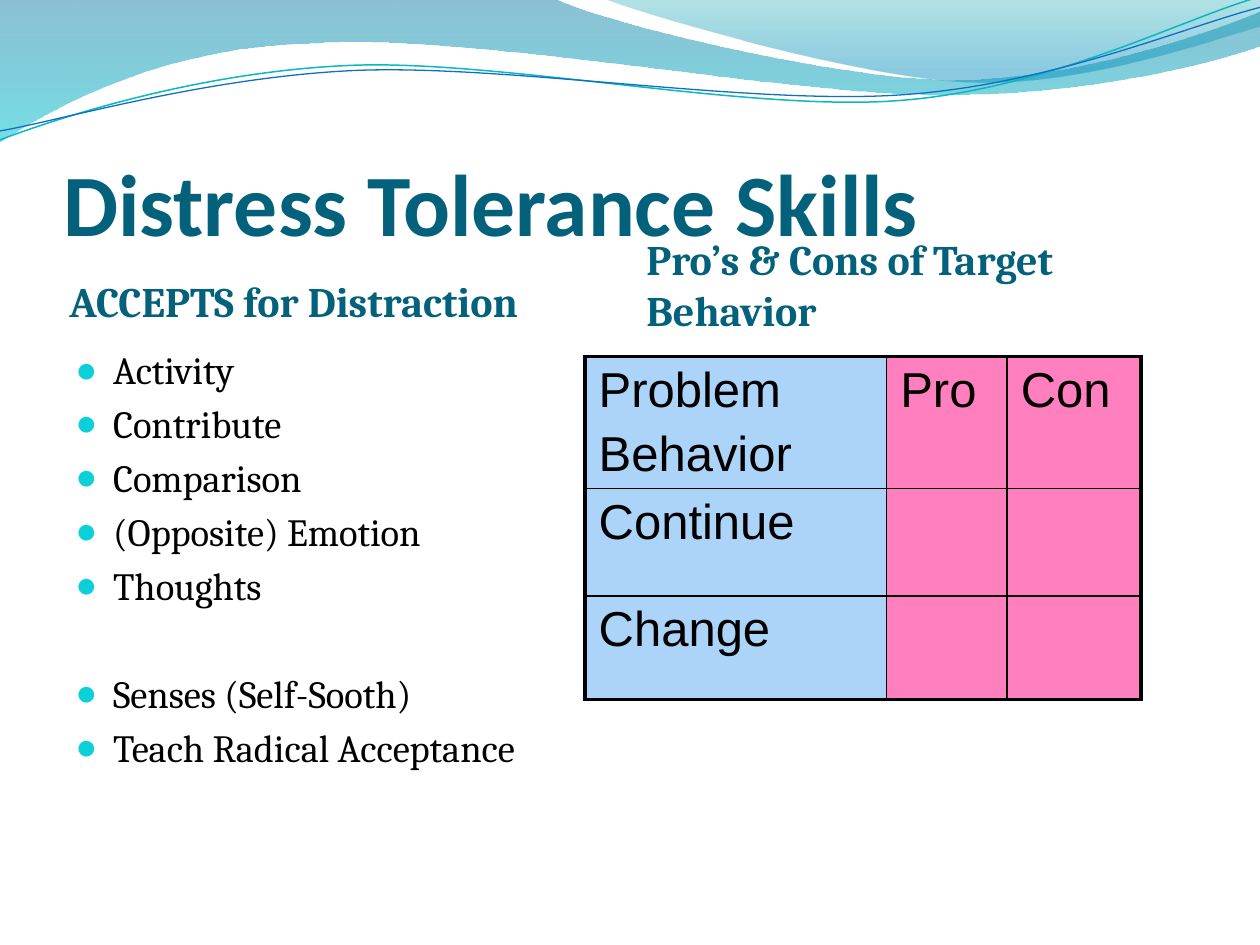
from dataclasses import dataclass

from lxml import etree
from pptx import Presentation
from pptx import util as u
from pptx.dml import color
from pptx.enum import text
from pptx.oxml import ns

TEAL, BLACK, BLUE, PINK = "04617B", "000000", "59AAF2", "FF0080"


@dataclass
class Ribbon:
    steps: list
    stops: list


@dataclass
class Strand:
    steps: list
    color: str
    width: float


@dataclass
class Style:
    font: str
    size: int
    color: str
    bold: bool = False


@dataclass
class Block:
    index: int
    box: tuple
    insets: tuple
    anchor: text.MSO_ANCHOR
    style: Style
    lines: list
    bullets: bool = False


RIBBONS = [
    Ribbon([(0, 0), (11.18, -0.03), (12.09, 0.43, 16.87, 1.6, 19.25, 1.6),
            (21.67, 1.6, 24.33, 0.66, 25.4, 0.23), (25.43, 0.91),
            (24.97, 1.12, 22.1, 1.93, 18.95, 1.91),
            (15.8, 1.91, 9.7, 0.71, 6.53, 0.86),
            (3.28, 0.91, 1.17, 2.11, -0.03, 2.87)],
           [(0, "0074A1", 45), (1, "00C6CF", 55)]),
    Ribbon([(12.17, -0.03), (12.93, 0.28, 17.32, 1.57, 19.53, 1.65),
            (21.74, 1.75, 24.41, 0.81, 25.4, 0.53), (25.4, 0)],
           [(0, "00A1A9", 30), (0.8, "008BBF", 45)]),
]
STRANDS = [
    Strand([(0, 2.82), (1.22, 2.36, 4.01, 1.45, 7.04, 1.32),
            (10.03, 1.19, 15.06, 2.26, 18.11, 2.03),
            (21.16, 1.8, 23.83, 0.38, 25.35, -0.05)], "0AB8BF", 0.85),
    Strand([(0, 2.64), (1.19, 2.44, 4.17, 1.55, 7.19, 1.42),
            (10.24, 1.3, 15.16, 2.13, 18.21, 1.91),
            (21.23, 1.7, 23.9, 0.53, 25.4, 0.15)], "0F6FC6", 0.75),
]

HEADING = Style("Cambria", 24, TEAL, True)
HEADING_INSETS = (0.13, 0, 0.13, 0)
BLOCKS = [
    Block(0, (1.27, 1.95, 22.86, 3.18), (0, 0.13, 0, 0), text.MSO_ANCHOR.BOTTOM,
          Style("Calibri", 50, TEAL, True), ["Distress Tolerance Skills"]),
    Block(1, (1.27, 5.15, 11.23, 1.83), HEADING_INSETS, text.MSO_ANCHOR.MIDDLE,
          HEADING, ["ACCEPTS for Distraction"]),
    Block(2, (1.27, 6.98, 11.23, 10.69), (0.25, 0, 0.25, 0.13), text.MSO_ANCHOR.TOP,
          Style("Cambria", 22, BLACK),
          ["Activity", "Contribute", "Comparison", "(Opposite) Emotion", "Thoughts",
           "Senses (Self-Sooth)", "Teach Radical Acceptance"], True),
    Block(3, (12.9, 4.27, 11.23, 2.92), HEADING_INSETS, text.MSO_ANCHOR.MIDDLE,
          HEADING, ["Pro’s & Cons of Target Behavior"]),
]
GROUP_START = "Senses (Self-Sooth)"
GROUP_GAP = 35.3

TABLE_STYLE = Style("Arial", 28, BLACK)
COLUMNS = [6.08, 2.43, 2.7]
ROWS = [2.65, 2.16, 2.09]
CELLS = [[["Problem", "Behavior"], ["Pro"], ["Con"]],
         [["Continue"], [], []],
         [["Change"], [], []]]


def rgb(value: str) -> color.RGBColor:
    return color.RGBColor.from_string(value)


def add_alpha(element, percent: int) -> None:
    alpha = etree.SubElement(element, ns.qn("a:alpha"))
    alpha.set("val", str(percent * 1000))


def add_outline(slide, steps: list, close: bool):
    points = [(u.Cm(step[i]), u.Cm(step[i + 1]))
              for step in steps for i in range(0, len(step), 2)]
    builder = slide.shapes.build_freeform(*points[0])
    builder.add_line_segments(points[1:], close=close)
    shape = builder.convert_to_shape()
    shape.shadow.inherit = False
    segments = iter(list(shape.element.iter(ns.qn("a:lnTo"))))
    for step in steps[1:]:
        parts = [next(segments) for _ in range(len(step) // 2)]
        if len(parts) == 3:
            curve = etree.Element(ns.qn("a:cubicBezTo"))
            parts[0].addprevious(curve)
            for part in parts:
                curve.append(part[0])
                part.getparent().remove(part)
    return shape


def draw_ribbon(slide, ribbon: Ribbon):
    shape = add_outline(slide, ribbon.steps, True)
    shape.line.fill.background()
    shape.fill.gradient()
    shape.fill.gradient_angle = 270
    for stop, (position, value, _) in zip(shape.fill.gradient_stops, ribbon.stops):
        stop.position = position
        stop.color.rgb = rgb(value)
    colors = list(shape.element.iter(ns.qn("a:srgbClr")))
    for element, (_, _, opacity) in zip(colors, ribbon.stops):
        add_alpha(element, opacity)
    return shape


def draw_strand(slide, strand: Strand):
    shape = add_outline(slide, strand.steps, False)
    shape.fill.background()
    shape.line.color.rgb = rgb(strand.color)
    shape.line.width = u.Pt(strand.width)
    return shape


def write_lines(frame, lines: list, style: Style) -> None:
    for number, line in enumerate(lines):
        paragraph = frame.paragraphs[0] if number == 0 else frame.add_paragraph()
        paragraph.alignment = text.PP_ALIGN.LEFT
        paragraph.space_before = u.Pt(style.size * 0.2)
        run = paragraph.add_run()
        run.text = line
        run.font.name = style.font
        run.font.size = u.Pt(style.size)
        run.font.bold = style.bold
        run.font.color.rgb = rgb(style.color)


def add_bullet(paragraph) -> None:
    properties = paragraph._p.get_or_add_pPr()
    properties.set("marL", str(u.Cm(0.76)))
    properties.set("indent", str(u.Cm(-0.76)))
    bullet_color = etree.SubElement(properties, ns.qn("a:buClr"))
    etree.SubElement(bullet_color, ns.qn("a:srgbClr")).set("val", "0BD0D9")
    etree.SubElement(properties, ns.qn("a:buSzPct")).set("val", "95000")
    etree.SubElement(properties, ns.qn("a:buChar")).set("char", "●")


def fill_block(slide, block: Block) -> None:
    shape = slide.placeholders[block.index]
    shape.left, shape.top, shape.width, shape.height = map(u.Cm, block.box)
    frame = shape.text_frame
    frame.word_wrap = True
    frame.auto_size = text.MSO_AUTO_SIZE.NONE
    frame.vertical_anchor = block.anchor
    (frame.margin_left, frame.margin_top,
     frame.margin_right, frame.margin_bottom) = map(u.Cm, block.insets)
    write_lines(frame, block.lines, block.style)
    if block.bullets:
        for paragraph in frame.paragraphs:
            if paragraph.text == GROUP_START:
                paragraph.space_before = u.Pt(GROUP_GAP)
            add_bullet(paragraph)


def set_borders(cell, outer: dict) -> None:
    properties = cell._tc.get_or_add_tcPr()
    for position, side in enumerate("LRTB"):
        line = etree.Element(ns.qn(f"a:ln{side}"))
        line.set("w", str(u.Pt(2.25 if outer[side] else 1)))
        fill = etree.SubElement(line, ns.qn("a:solidFill"))
        etree.SubElement(fill, ns.qn("a:srgbClr")).set("val", BLACK)
        properties.insert(position, line)


def draw_table(slide) -> None:
    frame = slide.shapes.add_table(len(ROWS), len(COLUMNS), u.Cm(11.79), u.Cm(7.19),
                                   u.Cm(sum(COLUMNS)), u.Cm(sum(ROWS)))
    table = frame.table
    table.first_row = table.horz_banding = False
    for column, width in zip(table.columns, COLUMNS):
        column.width = u.Cm(width)
    for r, height in enumerate(ROWS):
        table.rows[r].height = u.Cm(height)
        for c, lines in enumerate(CELLS[r]):
            cell = table.cell(r, c)
            cell.margin_left = cell.margin_right = u.Cm(0.28)
            cell.margin_top = cell.margin_bottom = u.Cm(0.13)
            write_lines(cell.text_frame, lines, TABLE_STYLE)
            cell.fill.solid()
            cell.fill.fore_color.rgb = rgb(PINK if c else BLUE)
            add_alpha(cell._tc.tcPr.find(".//" + ns.qn("a:srgbClr")), 50)
            set_borders(cell, {"L": c == 0, "R": c == len(COLUMNS) - 1,
                               "T": r == 0, "B": r == len(ROWS) - 1})


def main() -> None:
    presentation = Presentation()
    presentation.slide_width, presentation.slide_height = u.Cm(25.4), u.Cm(19.05)
    slide = presentation.slides.add_slide(presentation.slide_layouts[4])
    unused = slide.placeholders[4].element
    unused.getparent().remove(unused)
    waves = [draw_ribbon(slide, ribbon) for ribbon in RIBBONS]
    waves += [draw_strand(slide, strand) for strand in STRANDS]
    for position, wave in enumerate(waves, start=2):
        wave.element.getparent().insert(position, wave.element)
    for block in BLOCKS:
        fill_block(slide, block)
    draw_table(slide)
    presentation.save("out.pptx")


if __name__ == "__main__":
    main()
